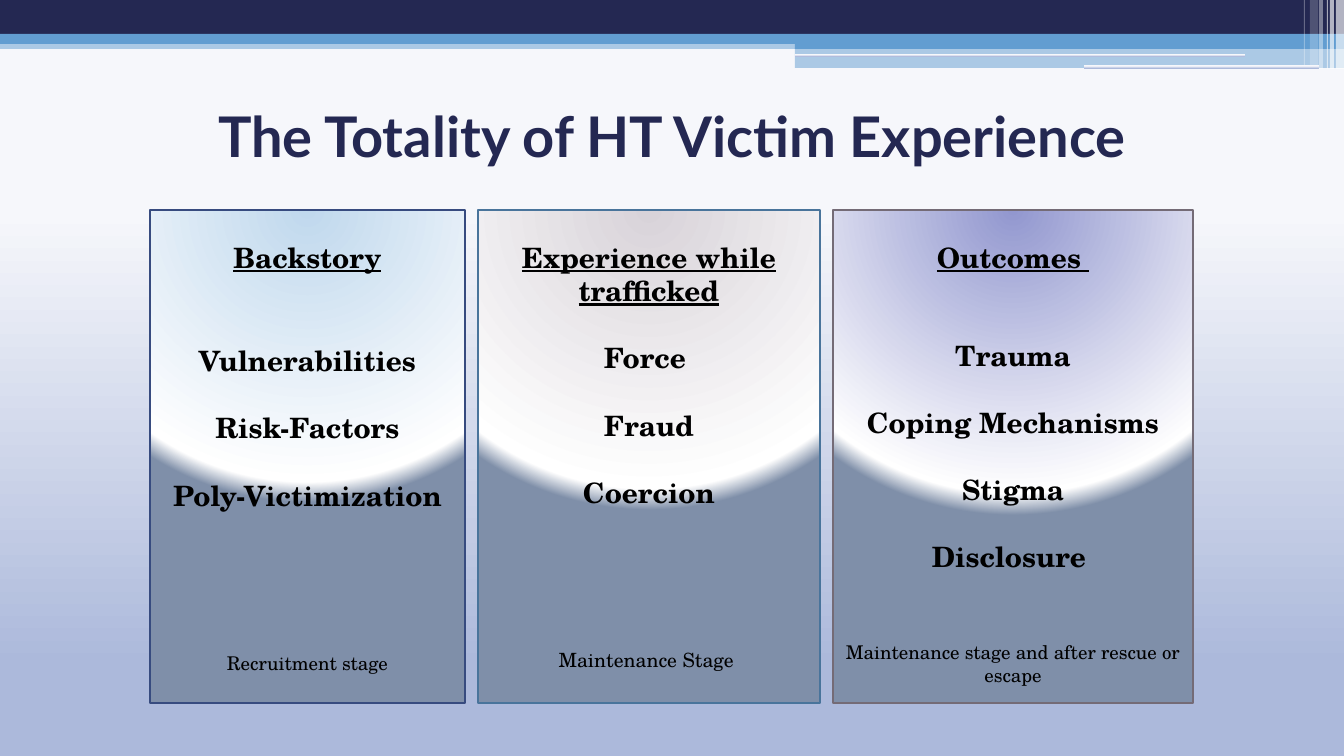
"""Build the slide on the three stages of a trafficking victim's experience."""
from dataclasses import dataclass

from lxml import etree
from pptx import Presentation
from pptx import util as u
from pptx.dml.color import RGBColor
from pptx.enum import shapes, text
from pptx.oxml.ns import qn


@dataclass(frozen=True)
class Theme:
    navy: str = "242852"
    blue: str = "629DD1"
    white: str = "FFFFFF"
    black: str = "000000"
    slate: str = "7F8FA9"
    title_font: str = "Lato"
    body_font: str = "TeX Gyre Schola"
    title_size: float = 40
    body_size: float = 20
    backdrop: tuple = ((28, "F6F7FB"), (88, "ACB9DB"), (100, "ACB9DB"), (100, "C8D1E7"))


theme = Theme()
PX = 914400 / 100.8
RECTANGLE = shapes.MSO_SHAPE.RECTANGLE
ROUNDED = shapes.MSO_SHAPE.ROUNDED_RECTANGLE


def add_box(kind, left, top, width, height, color=None, opacity=100):
    """Add a borderless shape, measured in px, with an optional solid fill."""
    shape = slide.shapes.add_shape(kind, *(round(v * PX) for v in (left, top, width, height)))
    shape.shadow.inherit = False
    shape.line.fill.background()
    if color:
        shape.fill.solid()
        shape.fill.fore_color.rgb = RGBColor.from_string(color)
        if opacity < 100:
            value = shape._element.spPr.find(".//" + qn("a:srgbClr"))
            etree.SubElement(value, qn("a:alpha"), val=str(opacity * 1000))
    return shape


def set_gradient(fill, owner, stops, radial=False):
    """Give a fill its stops, running downwards or as circles from above."""
    fill.gradient()
    gradient = owner.find(".//" + qn("a:gradFill"))
    for child in list(gradient):
        gradient.remove(child)
    stop_list = etree.SubElement(gradient, qn("a:gsLst"))
    for position, color in stops:
        stop = etree.SubElement(stop_list, qn("a:gs"), pos=str(position * 1000))
        etree.SubElement(stop, qn("a:srgbClr"), val=color)
    if radial:
        circle = etree.SubElement(gradient, qn("a:path"), attrib={"path": "circle"})
        etree.SubElement(circle, qn("a:fillToRect"), l="50000", t="-80000", r="50000", b="180000")
    else:
        etree.SubElement(gradient, qn("a:lin"), ang="5400000", scaled="0")


presentation = Presentation()
presentation.slide_width = round(1344 * PX)
presentation.slide_height = round(756 * PX)
slide = presentation.slides.add_slide(presentation.slide_layouts[6])
set_gradient(slide.background.fill, slide._element, theme.backdrop)

header_bars = [
    (0, 40, 1344, 9, theme.blue, 50),
    (0, 0, 1344, 34, theme.navy, 100),
    (0, 34, 1344, 10, theme.blue, 100),
    (795, 39, 549, 10, theme.blue, 100),
    (795, 48, 549, 20, theme.blue, 50),
]
for bar in header_bars:
    add_box(RECTANGLE, *bar)

for slot in [(795, 54, 450, 3), (1084, 65, 235, 4)]:
    shape = add_box(ROUNDED, *slot)
    set_gradient(shape.fill, shape._element, theme.backdrop)

corner_stripes = [
    (1336, 8, 69, 65), (1330, 4, 69, 65), (1327, 1, 69, 60),
    (1319, 4, 69, 40), (1310, 8, 65, 20), (1304, 1, 65, 30),
]
for left, width, height, opacity in corner_stripes:
    add_box(RECTANGLE, left, 0, width, height, theme.white, opacity)

title = slide.shapes.add_textbox(*(round(v * PX) for v in (67, 76, 1210, 118)))
title.text_frame.word_wrap = True
title.text_frame.vertical_anchor = text.MSO_ANCHOR.MIDDLE
title.text_frame.text = "The Totality of HT Victim Experience"
paragraph = title.text_frame.paragraphs[0]
paragraph.alignment = text.PP_ALIGN.CENTER
font = paragraph.runs[0].font
font.name, font.size, font.bold = theme.title_font, u.Pt(theme.title_size), True
font.color.rgb = RGBColor.from_string(theme.navy)

# Each card: width, glow, border, heading, gap after it, topics, gap before stage, stage, stage size
cards = [
    (315, "C0D8ED", "374B7F", "Backstory", 50,
     ["Vulnerabilities", "Risk-Factors", "Poly-Victimization"],
     100, "Recruitment stage", 13.5),
    (342, "D8D3D9", "49749B", "Experience while trafficked", 24,
     ["Force ", "Fraud", "Coercion"],
     99, "Maintenance Stage ", 14),
    (360, "9297CF", "746B76", "Outcomes ", 46,
     ["Trauma", "Coping Mechanisms", "Stigma", "Disclosure "],
     48, "Maintenance stage and after rescue or escape", 13.5),
]
left = 150
for width, glow, border, heading, heading_gap, topics, stage_gap, stage, stage_size in cards:
    card = add_box(RECTANGLE, left, 210, width, 493)
    left += width + 13
    set_gradient(card.fill, card._element,
                 [(0, glow), (93, theme.white), (100, theme.slate)], radial=True)
    card.line.color.rgb = RGBColor.from_string(border)
    card.line.width = u.Pt(1.5)

    frame = card.text_frame
    frame.word_wrap = True
    frame.vertical_anchor = text.MSO_ANCHOR.TOP
    frame.margin_top = round(30 * PX)
    frame.text = "\n".join([heading, *topics, stage])
    gaps = [0, heading_gap] + [24] * (len(topics) - 1) + [stage_gap]
    last = len(gaps) - 1
    for index, (paragraph, gap) in enumerate(zip(frame.paragraphs, gaps)):
        paragraph.alignment = text.PP_ALIGN.CENTER
        paragraph.space_before = u.Pt(gap)
        font = paragraph.runs[0].font
        font.name = theme.body_font
        font.size = u.Pt(stage_size if index == last else theme.body_size)
        font.bold = index != last
        font.underline = index == 0
        font.color.rgb = RGBColor.from_string(theme.black)

presentation.save("out.pptx")
